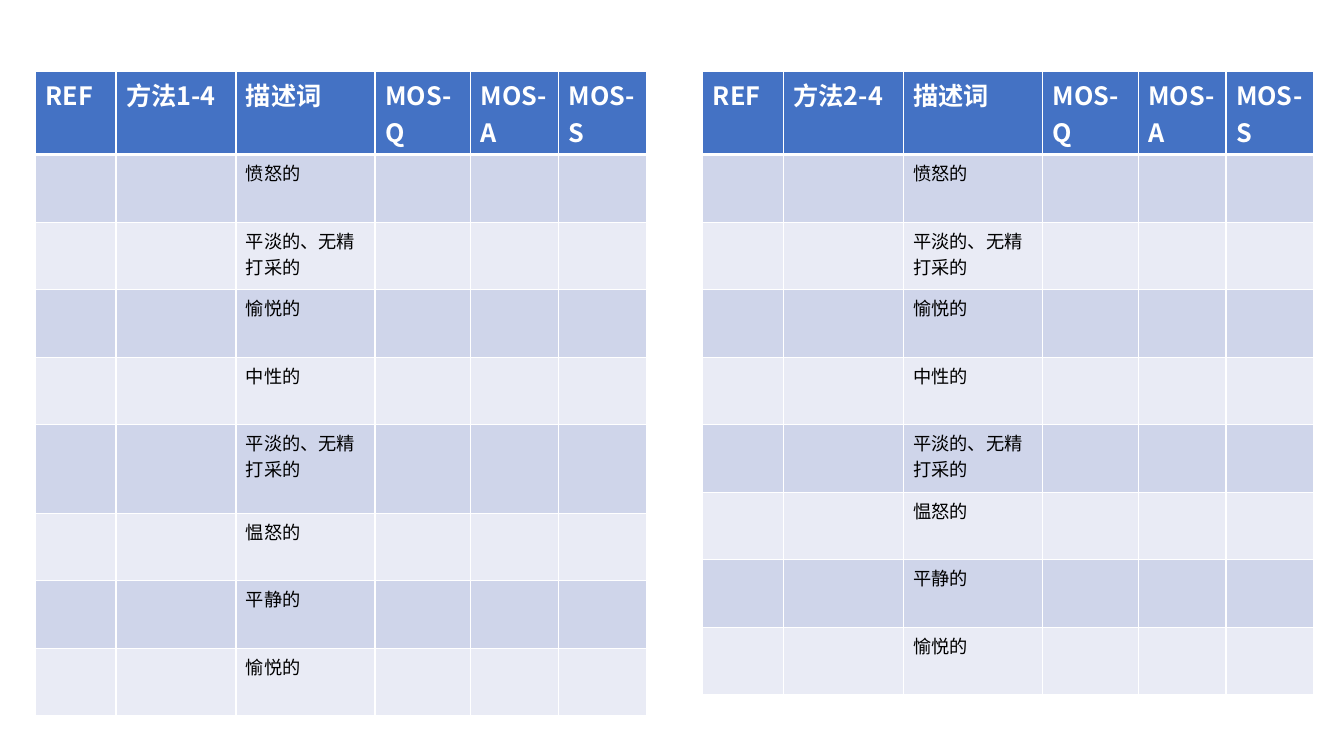
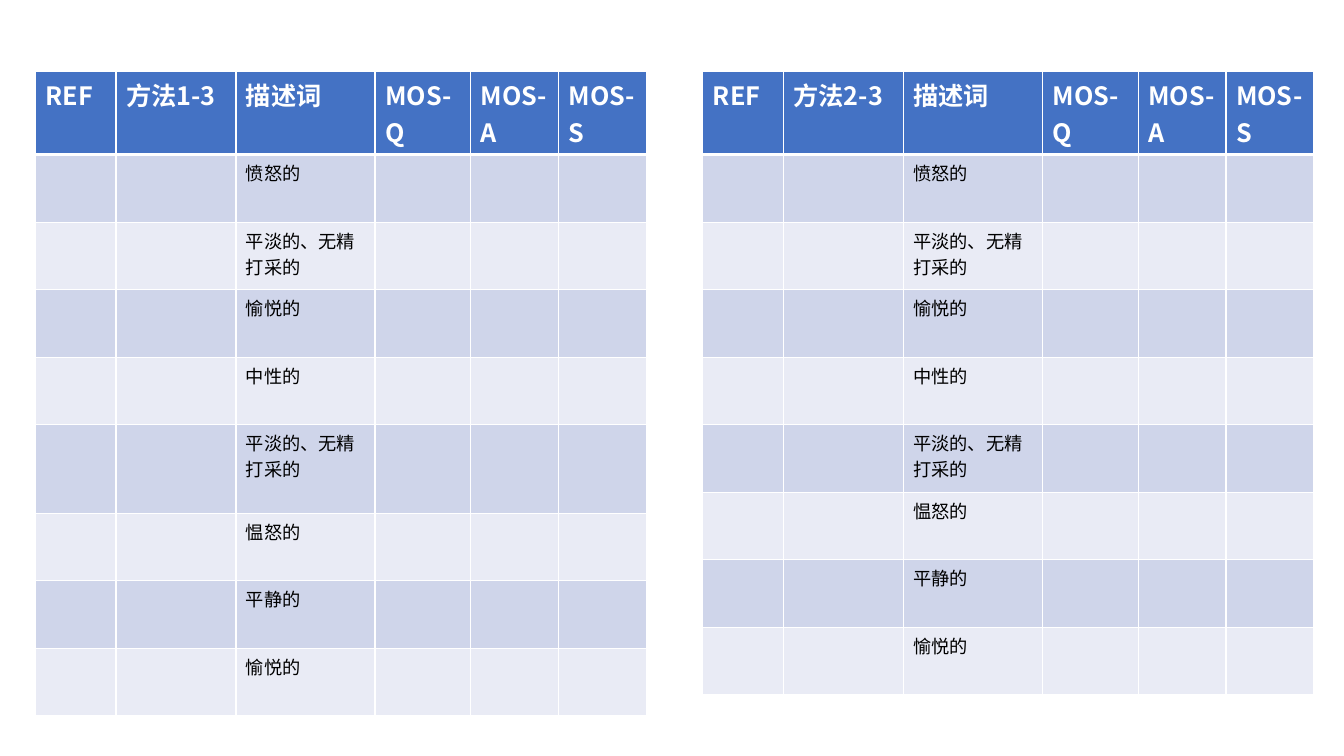
"""Build two slides of paired listening-test score tables."""
from dataclasses import dataclass

from lxml import etree
from pptx import Presentation
from pptx.dml.color import RGBColor
from pptx.oxml.ns import qn
from pptx.slide import Slide
from pptx.table import _Cell
from pptx.util import Inches, Pt

COLORS = {
    "header": "4472C4",
    "odd_band": "CFD5EA",
    "even_band": "E9EBF5",
    "grid": "FFFFFF",
    "header_text": "FFFFFF",
    "body_text": "000000",
}
FONT = "Noto Sans CJK SC"
HEADER_FORMAT = {"name": FONT, "size": Pt(18), "bold": True}
BODY_FORMAT = {"name": FONT, "size": Pt(13), "bold": False}

COLUMN_WIDTHS = (0.8, 1.19, 1.38, 0.95, 0.87, 0.87)
DESCRIPTOR_COLUMN = 2
DESCRIPTORS = (
    "愤怒的",
    "平淡的、无精打采的",
    "愉悦的",
    "中性的",
    "平淡的、无精打采的",
    "愠怒的",
    "平静的",
    "愉悦的",
)
TABLE_TOP = 0.71
HEADER_HEIGHT = 0.82
ROW_HEIGHT = 0.67
THIN, THICK = Pt(1), Pt(3)


@dataclass(frozen=True)
class ScorePanel:
    """Position of a score table, its method group and its taller rows."""

    group: int
    left: float
    tall_rows: dict[int, float]


PANELS = (ScorePanel(1, 0.35, {5: 0.88}), ScorePanel(2, 6.97, {}))
VARIANTS = (4, 3)


def set_borders(cell: _Cell, top: int, bottom: int) -> None:
    """Outline a cell in the grid colour."""
    properties = cell._tc.get_or_add_tcPr()
    for side, width in {"L": THIN, "R": THIN, "T": top, "B": bottom}.items():
        line = etree.SubElement(properties, qn(f"a:ln{side}"), w=str(width))
        fill = etree.SubElement(line, qn("a:solidFill"))
        etree.SubElement(fill, qn("a:srgbClr"), val=COLORS["grid"])


def write_text(cell: _Cell, text: str, text_format: dict, color: str) -> None:
    """Put one formatted run in a cell."""
    run = cell.text_frame.paragraphs[0].add_run()
    run.text = text
    for attribute, value in text_format.items():
        setattr(run.font, attribute, value)
    run.font.color.rgb = RGBColor.from_string(COLORS[color])
    etree.SubElement(run.font._element, qn("a:ea"), typeface=FONT)


def add_score_table(slide: Slide, panel: ScorePanel, variant: int) -> None:
    """Draw the score table of one method."""
    headings = ("REF", f"方法{panel.group}-{variant}", "描述词", "MOS-Q", "MOS-A", "MOS-S")
    heights = [HEADER_HEIGHT] + [
        panel.tall_rows.get(number, ROW_HEIGHT)
        for number in range(1, len(DESCRIPTORS) + 1)
    ]
    scores = slide.shapes.add_table(
        len(heights), len(headings), Inches(panel.left), Inches(TABLE_TOP),
        Inches(sum(COLUMN_WIDTHS)), Inches(sum(heights)),
    ).table
    for column, width in zip(scores.columns, COLUMN_WIDTHS):
        column.width = Inches(width)
    for number, (row, height) in enumerate(zip(scores.rows, heights)):
        row.height = Inches(height)
        band = "header" if number == 0 else "odd_band" if number % 2 else "even_band"
        for cell in row.cells:
            set_borders(
                cell,
                top=THICK if number == 1 else THIN,
                bottom=THICK if number == 0 else THIN,
            )
            cell.fill.solid()
            cell.fill.fore_color.rgb = RGBColor.from_string(COLORS[band])
    for index, heading in enumerate(headings):
        write_text(scores.cell(0, index), heading, HEADER_FORMAT, "header_text")
    for number, descriptor in enumerate(DESCRIPTORS, start=1):
        write_text(
            scores.cell(number, DESCRIPTOR_COLUMN), descriptor, BODY_FORMAT, "body_text"
        )


def main() -> None:
    """Build and save the presentation."""
    presentation = Presentation()
    presentation.slide_width = Inches(13.33)
    presentation.slide_height = Inches(7.5)
    blank_layout = presentation.slide_layouts[6]
    for variant in VARIANTS:
        slide = presentation.slides.add_slide(blank_layout)
        for panel in PANELS:
            add_score_table(slide, panel, variant)
    presentation.save("out.pptx")


if __name__ == "__main__":
    main()
